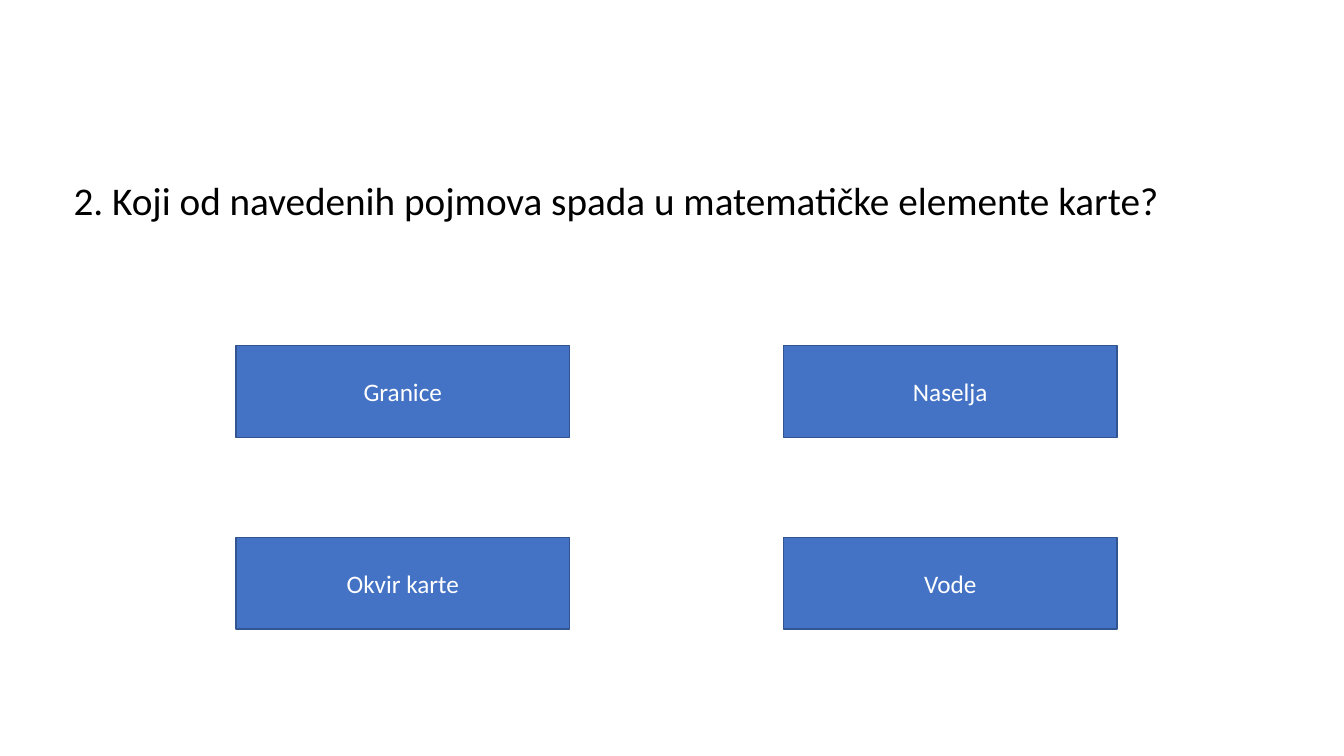
from dataclasses import dataclass

from pptx import Presentation
from pptx.dml.color import RGBColor
from pptx.enum.shapes import MSO_SHAPE
from pptx.enum.text import MSO_ANCHOR, MSO_AUTO_SIZE, PP_ALIGN
from pptx.util import Inches, Pt


@dataclass(frozen=True)
class Theme:
    font: str = "Calibri"
    question_size: int = 28
    answer_size: int = 18
    question_color: str = "000000"
    answer_color: str = "FFFFFF"
    fill: str = "4472C4"
    line: str = "325491"


THEME = Theme()


def add_text(tf, text, size, color, align):
    p = tf.paragraphs[0]
    p.alignment = align
    r = p.add_run()
    r.text = text
    r.font.name = THEME.font
    r.font.size = Pt(size)
    r.font.color.rgb = RGBColor.from_string(color)


def add_question(s, text, left, top, width, height):
    sp = s.shapes.title
    sp.left, sp.top = Inches(left), Inches(top)
    sp.width, sp.height = Inches(width), Inches(height)
    tf = sp.text_frame
    tf.word_wrap = True
    tf.auto_size = MSO_AUTO_SIZE.SHAPE_TO_FIT_TEXT
    tf.vertical_anchor = MSO_ANCHOR.TOP
    add_text(tf, text, THEME.question_size, THEME.question_color, PP_ALIGN.LEFT)


def add_answer(s, text, left, top, width, height):
    sp = s.shapes.add_shape(MSO_SHAPE.RECTANGLE, Inches(left), Inches(top),
                            Inches(width), Inches(height))
    sp.shadow.inherit = False
    sp.fill.solid()
    sp.fill.fore_color.rgb = RGBColor.from_string(THEME.fill)
    sp.line.color.rgb = RGBColor.from_string(THEME.line)
    sp.line.width = Pt(1)
    tf = sp.text_frame
    tf.word_wrap = True
    tf.vertical_anchor = MSO_ANCHOR.MIDDLE
    add_text(tf, text, THEME.answer_size, THEME.answer_color, PP_ALIGN.CENTER)


def add_answers(s, rows, left, top, width, height):
    """Spread the answers over the box, with buttons flush to its edges."""
    button_w, button_h = 3.31, 0.91
    step_y = (height - button_h) / (len(rows) - 1)
    for i, row in enumerate(rows):
        step_x = (width - button_w) / (len(row) - 1)
        for j, text in enumerate(row):
            add_answer(s, text, left + j * step_x, top + i * step_y,
                       button_w, button_h)


def main():
    prs = Presentation()
    prs.slide_width, prs.slide_height = Inches(13.33), Inches(7.5)
    s = prs.slides.add_slide(prs.slide_layouts[5])  # title only

    # Question
    add_question(s, "2. Koji od navedenih pojmova spada u matematičke elemente karte?",
                 0.63, 1.7, 11.81, 0.57)

    # Answer buttons
    add_answers(s, [["Granice", "Naselja"], ["Okvir karte", "Vode"]],
                2.34, 3.43, 8.74, 2.81)

    prs.save("out.pptx")


if __name__ == "__main__":
    main()
